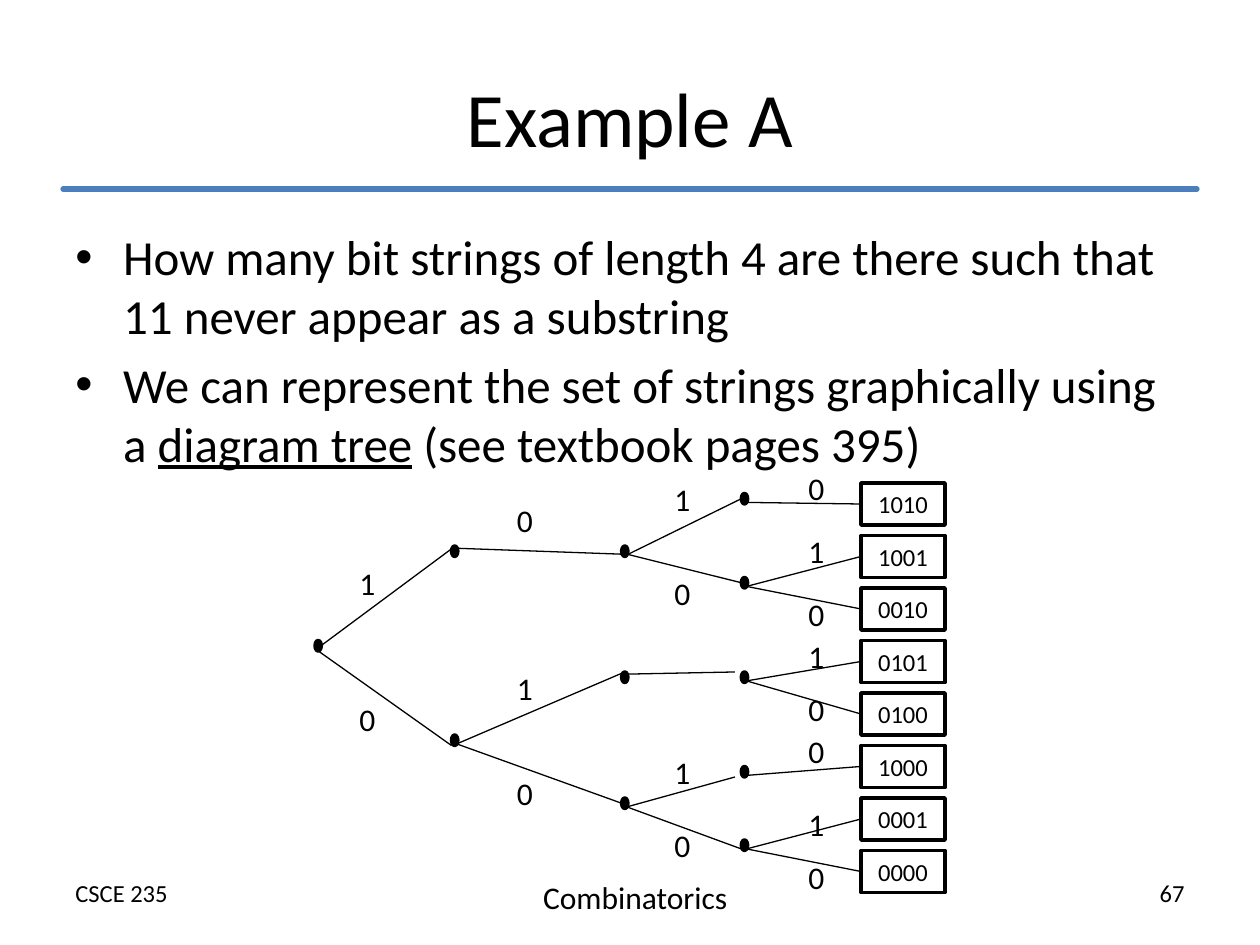
from dataclasses import dataclass
from itertools import count

from lxml.etree import SubElement
from pptx import Presentation
from pptx.dml.color import RGBColor
from pptx.enum.shapes import MSO_CONNECTOR, MSO_SHAPE
from pptx.enum.text import MSO_ANCHOR, PP_ALIGN
from pptx.oxml.ns import qn
from pptx.util import Inches, Pt

BLACK = RGBColor(0x00, 0x00, 0x00)
BLUE = RGBColor(0x4B, 0x7E, 0xBC)
FONT = "Calibri"
CELL = Inches(1) / 12  # one column or row of the page grid (120 x 90)

# Columns of the tree, counted from its left edge
NODE_COLUMNS = [0, 13, 29.2, 40.6]
LABEL_COLUMNS = [2.5, 17.5, 32.5, 45.25]
LEAF_COLUMN = 52


@dataclass
class Leaf:
    bits: str
    label: str
    label_row: float


@dataclass
class Node:
    """A dot; arrive and depart are where edges meet it, from its top left."""
    row: float
    label: str = ""
    label_row: float = 0
    arrive: tuple = (0, 0.5)
    depart: tuple = (0.5, 0.85)
    children: tuple = ()


TREE = Node(17, depart=(0.1, 0.85), children=(
    Node(8, "1", 9, (0.1, 0.2), (0.1, 0.2), children=(
        Node(8, "0", 3, (0.6, 0.8), (0.6, 0.8), children=(
            Node(3, "1", 1, children=(Leaf("1010", "0", 0),)),
            Node(11, "0", 10, children=(Leaf("1001", "1", 6), Leaf("0010", "0", 12))),
        )),
    )),
    Node(26, "0", 22, (0, 1), children=(
        Node(20, "1", 19, (0.3, 0), (0.6, 0.2), children=(
            Node(20, arrive=(-0.6, 0),
                 children=(Leaf("0101", "1", 16), Leaf("0100", "0", 21))),
        )),
        Node(32, "0", 29, (0, 0.5), children=(
            Node(29, "1", 27, (-0.6, 1), children=(Leaf("1000", "0", 25),)),
            Node(36, "0", 34, (0, 0.85),
                 children=(Leaf("0001", "1", 32), Leaf("0000", "0", 37))),
        )),
    )),
))


def grid(*cells):
    return [round(cell * CELL) for cell in cells]


def add_span(para, text, size, underline=None):
    span = para.add_run()
    span.text = text
    span.font.name = FONT
    span.font.size = Pt(size)
    span.font.color.rgb = BLACK
    span.font.underline = underline


def add_text(page, box, text, size, align, anchor=MSO_ANCHOR.TOP):
    frame = page.shapes.add_textbox(*grid(*box)).text_frame
    frame.word_wrap = True
    frame.vertical_anchor = anchor
    para = frame.paragraphs[0]
    para.alignment = align
    add_span(para, text, size)


def add_line(page, start, end, color, width):
    line = page.shapes.add_connector(MSO_CONNECTOR.STRAIGHT, *grid(*start, *end))
    line.line.color.rgb = color
    line.line.width = Pt(width)
    SubElement(line.element.spPr, qn("a:effectLst"))
    return line


def add_outlined(page, kind, box):
    shape = page.shapes.add_shape(kind, *grid(*box))
    shape.shadow.inherit = False
    shape.fill.background()
    shape.line.color.rgb = BLACK
    shape.line.width = Pt(2)
    return shape


def add_header(page, box):
    left, top, width, height = box
    add_text(page, box, "Example A", 44, PP_ALIGN.CENTER, MSO_ANCHOR.MIDDLE)
    rule_row = top + height - 0.6
    rule = add_line(page, (left, rule_row), (left + width, rule_row), BLUE, 3)
    rule.line._get_or_add_ln().set("cap", "rnd")


def add_bullets(page, box, bullets):
    """Each bullet is a list of (text, underline) pairs."""
    frame = page.shapes.add_textbox(*grid(*box)).text_frame
    frame.word_wrap = True
    for index, spans in enumerate(bullets):
        para = frame.add_paragraph() if index else frame.paragraphs[0]
        para.space_before = Pt(5.6)
        properties = para._p.get_or_add_pPr()
        properties.set("marL", str(Inches(0.38)))
        properties.set("indent", str(-Inches(0.38)))
        SubElement(properties, qn("a:buFont")).set("typeface", "Arial")
        SubElement(properties, qn("a:buChar")).set("char", "•")
        for text, underline in spans:
            add_span(para, text, 28, underline)


def add_leaf(page, box, bits):
    shape = add_outlined(page, MSO_SHAPE.RECTANGLE, box)
    frame = shape.text_frame
    frame.margin_left = frame.margin_right = 0
    frame.margin_top = frame.margin_bottom = 0
    frame.word_wrap = False
    frame.vertical_anchor = MSO_ANCHOR.MIDDLE
    para = frame.paragraphs[0]
    para.alignment = PP_ALIGN.CENTER
    add_span(para, bits, 14)
    return shape


def add_tree(page, box, root):
    left, top, width, _ = box
    leaf_numbers = count()

    def add_branch(node, level):
        column, row = left + NODE_COLUMNS[level], top + node.row
        dot = add_outlined(page, MSO_SHAPE.OVAL, (column, row, 0.6, 1))
        dot.fill.solid()
        dot.fill.fore_color.rgb = BLACK
        start = (column + node.depart[0], row + node.depart[1])
        for child in node.children:
            if isinstance(child, Leaf):
                leaf_row = top + 2 + 5 * next(leaf_numbers)
                leaf_left = left + LEAF_COLUMN
                leaf = add_leaf(page, (leaf_left, leaf_row, left + width - leaf_left, 4),
                                child.bits)
                edge = add_line(page, start, (leaf_left, leaf_row + 2), BLACK, 0.75)
                edge.end_connect(leaf, 1)
            else:
                end = (left + NODE_COLUMNS[level + 1] + child.arrive[0],
                       top + child.row + child.arrive[1])
                add_line(page, start, end, BLACK, 0.75)
                add_branch(child, level + 1)
            if child.label:
                label_box = (left + LABEL_COLUMNS[level], top + child.label_row, 5, 5)
                add_text(page, label_box, child.label, 18, PP_ALIGN.CENTER,
                         MSO_ANCHOR.MIDDLE)

    add_branch(root, 0)


def add_footer(page, box):
    left, top, width, height = box
    part = 35
    add_text(page, (left, top, part, height), "CSCE 235", 14, PP_ALIGN.LEFT)
    add_text(page, (left + 37, top, part, height), "Combinatorics", 18, PP_ALIGN.CENTER)
    add_text(page, (left + width - part, top, part, height), "67", 14, PP_ALIGN.RIGHT)


def main():
    deck = Presentation()
    deck.slide_width, deck.slide_height = Inches(10), Inches(7.5)
    page = deck.slides.add_slide(deck.slide_layouts[6])
    add_footer(page, (6, 83, 108, 4))
    add_header(page, (6, 3.6, 108, 15))
    add_bullets(page, (6, 21, 108, 59.4), [
        [("How many bit strings of length 4 are there such that "
          "11 never appear as a substring", None)],
        [("We can represent the set of strings graphically using a ", None),
         ("diagram tree", True), (" (see textbook pages 395)", None)],
    ])
    add_tree(page, (30, 44, 60, 42), TREE)
    deck.save("out.pptx")


if __name__ == "__main__":
    main()
